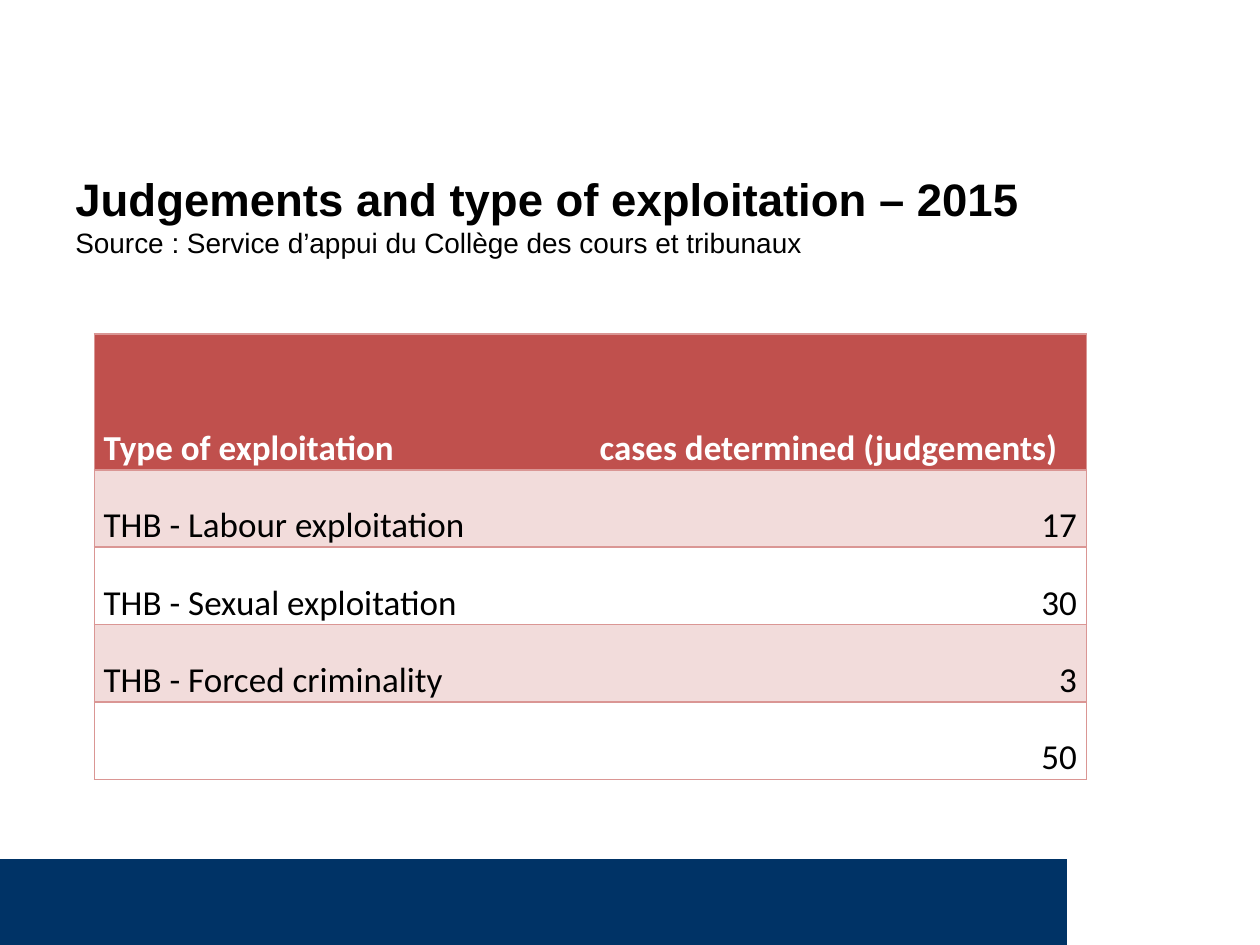
from dataclasses import dataclass

from lxml import etree
from pptx import Presentation
from pptx.dml.color import RGBColor
from pptx.enum import shapes, text
from pptx.oxml import ns
from pptx.util import Cm, Pt


@dataclass(frozen=True)
class Theme:
    navy: str = "003366"
    red: str = "C0504D"
    pink: str = "F2DCDB"
    rule: str = "DA9694"
    black: str = "000000"
    white: str = "FFFFFF"
    head: str = "Arial"
    body: str = "Calibri"
    title: int = 26
    note: int = 16
    cell: int = 20


class Deck:
    def __init__(self, theme):
        self.theme = theme
        self.file = Presentation()
        self.file.slide_width, self.file.slide_height = Cm(25.4), Cm(19.05)
        self.slide = self.file.slides.add_slide(self.file.slide_layouts[6])

    def run(self, para, words, face, size, color, bold=False):
        run = para.add_run()
        run.text = words
        font = run.font
        font.name, font.size, font.bold = face, Pt(size), bold
        font.color.rgb = RGBColor.from_string(color)

    def bar(self, x, y, w, h):
        bar = self.slide.shapes.add_shape(
            shapes.MSO_SHAPE.RECTANGLE, Cm(x), Cm(y), Cm(w), Cm(h))
        bar.shadow.inherit = False
        bar.fill.solid()
        bar.fill.fore_color.rgb = RGBColor.from_string(self.theme.navy)
        bar.line.fill.background()

    def title(self, x, y, w, h, main, note):
        t = self.theme
        frame = self.slide.shapes.add_textbox(
            Cm(x), Cm(y), Cm(w), Cm(h)).text_frame
        frame.word_wrap = True
        frame.vertical_anchor = text.MSO_ANCHOR.MIDDLE
        para = frame.paragraphs[0]
        self.run(para, main, t.head, t.title, t.black, True)
        para.add_line_break()
        self.run(para, note, t.head, t.note, t.black)

    def edges(self, cell, drawn):
        """Rule the drawn sides of a cell and clear the others."""
        props = cell._tc.get_or_add_tcPr()
        for spot, side in enumerate("LRTB"):
            line = etree.Element(ns.qn(f"a:ln{side}"), w=str(Pt(1)))
            if side in drawn:
                fill = etree.SubElement(line, ns.qn("a:solidFill"))
                etree.SubElement(fill, ns.qn("a:srgbClr"), val=self.theme.rule)
            else:
                etree.SubElement(line, ns.qn("a:noFill"))
            props.insert(spot, line)

    def cell(self, cell, words, row, col):
        t = self.theme
        cell.margin_left = cell.margin_right = Cm(0.19)
        cell.margin_top = cell.margin_bottom = 0
        cell.vertical_anchor = text.MSO_ANCHOR.BOTTOM
        head = row == 0
        if head or row % 2:
            cell.fill.solid()
            cell.fill.fore_color.rgb = RGBColor.from_string(
                t.red if head else t.pink)
        else:
            cell.fill.background()
        self.edges(cell, "RTB" if col else "LTB")
        para = cell.text_frame.paragraphs[0]
        if col and not head:
            para.alignment = text.PP_ALIGN.RIGHT
        if words:
            self.run(para, words, t.body, t.cell,
                     t.white if head else t.black, head)
        else:
            para.font.size = Pt(t.cell)

    def table(self, x, y, cols, rows, data):
        table = self.slide.shapes.add_table(
            len(rows), len(cols), Cm(x), Cm(y),
            Cm(sum(cols)), Cm(sum(rows))).table
        table.first_row = table.horz_banding = False
        for col, width in zip(table.columns, cols):
            col.width = Cm(width)
        for row, height in zip(table.rows, rows):
            row.height = Cm(height)
        for r, line in enumerate(data):
            for c, words in enumerate(line):
                self.cell(table.cell(r, c), words, r, c)


def main():
    deck = Deck(Theme())
    deck.bar(0, 17.32, 21.51, 1.73)
    deck.title(1.27, 2.74, 23.06, 3.18,
               "Judgements and type of exploitation – 2015",
               "Source : Service d’appui du Collège des cours et tribunaux")
    deck.table(1.9, 6.73, [10, 10], [2.74] + [1.56] * 4, [
        ("Type of exploitation", "cases determined (judgements)"),
        ("THB - Labour exploitation", "17"),
        ("THB - Sexual exploitation", "30"),
        ("THB - Forced criminality", "3"),
        ("", "50"),
    ])
    deck.file.save("out.pptx")


if __name__ == "__main__":
    main()
